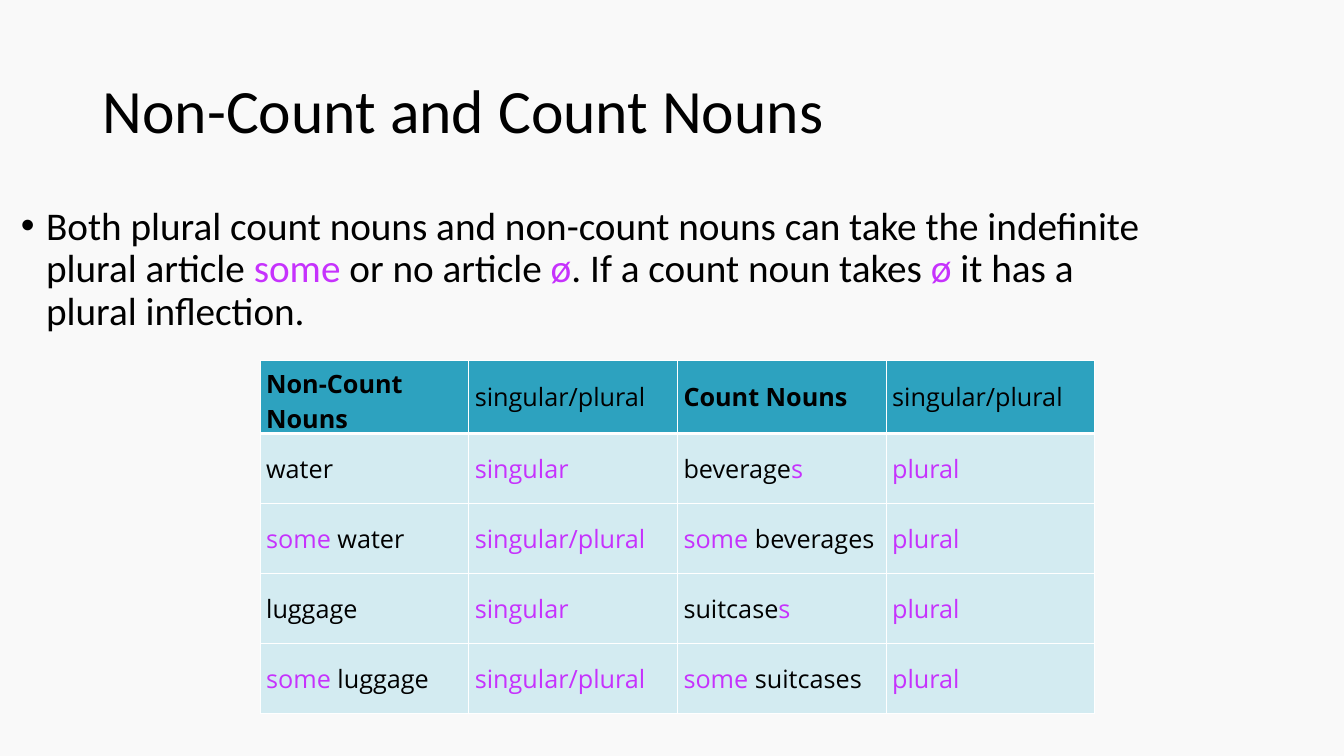
import lxml.etree
import pptx
import pptx.dml.color
import pptx.enum.text
import pptx.oxml.ns
import pptx.util

Inches = pptx.util.Inches
BLACK, PURPLE, WHITE = "000000", "C632FD", "FFFFFF"
BACKGROUND, HEADER_FILL, BODY_FILL = "F9F9F9", "2DA2BF", "D3EBF1"
MIDDLE = pptx.enum.text.MSO_ANCHOR.MIDDLE

NOUN_ROWS = [
    ["Non-Count Nouns", "singular/plural", "Count Nouns", "singular/plural"],
    ["water", "*singular*", "beverage*s*", "*plural*"],
    ["*some* water", "*singular/plural*", "*some* beverages", "*plural*"],
    ["luggage", "*singular*", "suitcase*s*", "*plural*"],
    ["*some* luggage", "*singular/plural*", "*some* suitcases", "*plural*"],
]


def color(hex_string):
    return pptx.dml.color.RGBColor.from_string(hex_string)


def add_element(parent, tag, **attributes):
    return lxml.etree.SubElement(parent, pptx.oxml.ns.qn(tag), attributes)


def write_text(paragraph, marked_text, font_name, size, bold=False):
    font = paragraph.font
    font.name = font_name
    font.size = pptx.util.Pt(size)
    font.bold = bold
    font.color.rgb = color(BLACK)
    for index, part in enumerate(marked_text.split("*")):
        if part:
            run = paragraph.add_run()
            run.text = part
            if index % 2:
                run.font.color.rgb = color(PURPLE)


def add_text_box(slide, left, top, width, height):
    box = slide.shapes.add_textbox(Inches(left), Inches(top), Inches(width), Inches(height))
    box.text_frame.word_wrap = True
    paragraph = box.text_frame.paragraphs[0]
    paragraph.line_spacing = 0.9
    return box.text_frame, paragraph


def add_title(slide, left, top, width, height):
    text_frame, paragraph = add_text_box(slide, left, top, width, height)
    text_frame.vertical_anchor = MIDDLE
    write_text(paragraph, "Non-Count and Count Nouns", "Calibri", 44)


def add_explanation(slide, left, top, width, height):
    paragraph = add_text_box(slide, left, top, width, height)[1]
    properties = paragraph._p.get_or_add_pPr()
    properties.set("marL", str(Inches(0.36)))
    properties.set("indent", str(Inches(-0.25)))
    add_element(properties, "a:buFont", typeface="Arial")
    add_element(properties, "a:buChar", char="•")
    write_text(
        paragraph,
        "Both plural count nouns and non-count nouns can take the indefinite plural article "
        "*some *or no article *ø*. If a count noun takes *ø* it has a plural inflection.",
        "Calibri", 28,
    )


def set_borders(cell, top, bottom):
    properties = cell._tc.get_or_add_tcPr()
    for tag, points in (("a:lnL", 1), ("a:lnR", 1), ("a:lnT", top), ("a:lnB", bottom)):
        line = add_element(properties, tag, w=str(pptx.util.Pt(points)))
        add_element(add_element(line, "a:solidFill"), "a:srgbClr", val=WHITE)


def add_noun_table(slide, left, top, width, height):
    row_count, column_count = len(NOUN_ROWS), len(NOUN_ROWS[0])
    table = slide.shapes.add_table(
        row_count, column_count, Inches(left), Inches(top), Inches(width), Inches(height)
    ).table
    table.first_row = False
    table.horz_banding = False
    header_height = 0.71
    for row_index, texts in enumerate(NOUN_ROWS):
        is_header = row_index == 0
        body_height = (height - header_height) / (row_count - 1)
        table.rows[row_index].height = Inches(header_height if is_header else body_height)
        for column_index, text in enumerate(texts):
            cell = table.cell(row_index, column_index)
            set_borders(cell, 3 if row_index == 1 else 1, 3 if is_header else 1)
            cell.fill.solid()
            cell.fill.fore_color.rgb = color(HEADER_FILL if is_header else BODY_FILL)
            cell.vertical_anchor = MIDDLE
            cell.margin_left = cell.margin_right = Inches(0.06)
            cell.margin_top = cell.margin_bottom = Inches(0.06)
            bold = is_header and column_index % 2 == 0
            write_text(cell.text_frame.paragraphs[0], text, "Open Sans", 18, bold)


def main():
    presentation = pptx.Presentation()
    presentation.slide_width = Inches(13.33)
    presentation.slide_height = Inches(7.5)
    slide = presentation.slides.add_slide(presentation.slide_layouts[6])
    slide.background.fill.solid()
    slide.background.fill.fore_color.rgb = color(BACKGROUND)
    add_title(slide, 0.92, 0.4, 11.5, 1.45)
    add_explanation(slide, 0, 2, 11.5, 4.76)
    add_noun_table(slide, 2.58, 3.58, 8.28, 3.49)
    presentation.save("out.pptx")


if __name__ == "__main__":
    main()
